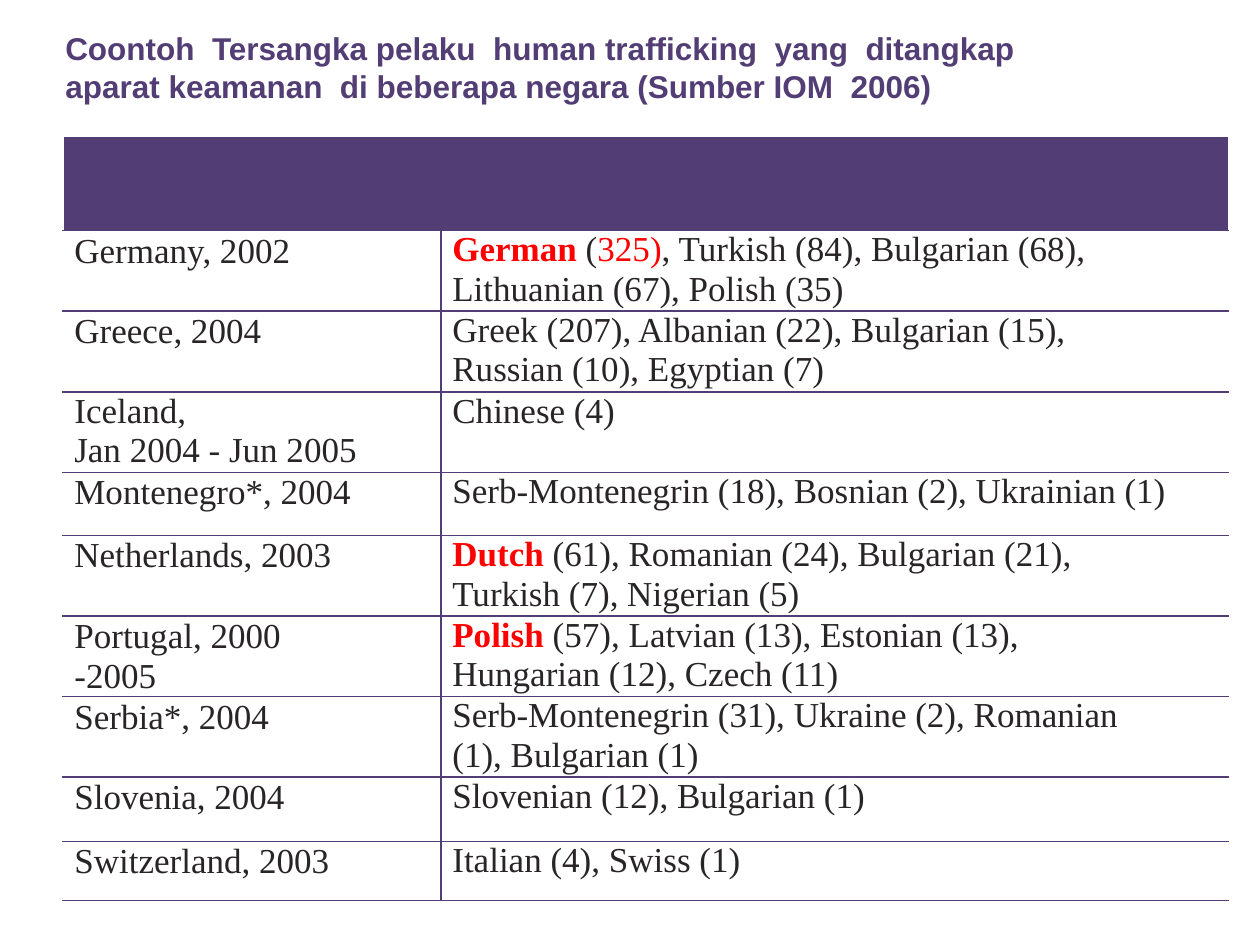
from dataclasses import dataclass

from lxml.etree import SubElement
from pptx import Presentation
from pptx.dml.color import RGBColor as RGB
from pptx.enum.text import MSO_ANCHOR as ANCHOR
from pptx.oxml.ns import qn
from pptx.util import Inches, Pt


@dataclass(frozen=True)
class Theme:
    purple: RGB = RGB(0x52, 0x3D, 0x75)
    ink: RGB = RGB(0x29, 0x24, 0x25)
    red: RGB = RGB(0xFF, 0, 0)
    white: RGB = RGB(0xFF, 0xFF, 0xFF)
    title_font: str = "Arial"
    body_font: str = "Times New Roman"
    title_size: int = 18
    body_size: int = 20
    border: int = 1


@dataclass(frozen=True)
class Part:
    text: str
    red: bool = False
    bold: bool = False


@dataclass(frozen=True)
class Arrests:
    place: list[str]
    suspects: list[list[Part]]
    height: float = 0.64
    place_right: float = 0


T = Theme()


def lead(name: str, rest: str) -> list[Part]:
    """A line that opens with a highlighted nationality."""
    return [Part(name, red=True, bold=True), Part(rest)]


def plain(*lines: str) -> list[list[Part]]:
    return [[Part(line)] for line in lines]


ROWS = [
    Arrests(["Germany, 2002"], [
        lead("German", " (") + [Part("325)", red=True), Part(", Turkish (84), Bulgarian (68),")],
        *plain("Lithuanian (67), Polish (35)")]),
    Arrests(["Greece, 2004"], plain("Greek (207), Albanian (22), Bulgarian (15),",
                                    "Russian (10), Egyptian (7)")),
    Arrests(["Iceland,", "Jan 2004 - Jun 2005"], plain("Chinese (4)")),
    Arrests(["Montenegro*, 2004"],
            plain("Serb-Montenegrin (18), Bosnian (2), Ukrainian (1)"), 0.5),
    Arrests(["Netherlands, 2003"], [lead("Dutch ", "(61), Romanian (24), Bulgarian (21),"),
                                    *plain("Turkish (7), Nigerian (5)")]),
    Arrests(["Portugal, 2000 -2005"], [lead("Polish ", "(57), Latvian (13), Estonian (13),"),
                                       *plain("Hungarian (12), Czech (11)")],
            place_right=0.75),
    Arrests(["Serbia*, 2004"], plain("Serb-Montenegrin (31), Ukraine (2), Romanian",
                                     "(1), Bulgarian (1)")),
    Arrests(["Slovenia, 2004"], plain("Slovenian (12), Bulgarian (1)"), 0.51),
    Arrests(["Switzerland, 2003"], plain("Italian (4), Swiss (1)"), 0.47),
]
COLS = [3, 6.25]
HEADER_HEIGHT = 0.75


def add_run(p, text: str, *, font: str = T.body_font, size: float = T.body_size,
            color: RGB = T.ink, bold: bool = False) -> None:
    r = p.add_run()
    r.text = text
    r.font.name, r.font.size, r.font.bold = font, Pt(size), bold
    r.font.color.rgb = color


def set_borders(cell, sides: str) -> None:
    """Rule the given sides; sides follow the schema order L, R, T, B."""
    tc_pr = cell._tc.get_or_add_tcPr()
    for i, side in enumerate(sides):
        ln = SubElement(tc_pr, qn(f"a:ln{side}"), w=str(Pt(T.border)))
        fill = SubElement(ln, qn("a:solidFill"))
        SubElement(fill, qn("a:srgbClr"), val=str(T.purple))
        tc_pr.remove(ln)
        tc_pr.insert(i, ln)


def fill_cell(cell, color: RGB) -> None:
    cell.fill.solid()
    cell.fill.fore_color.rgb = color


def write_cell(cell, lines: list[list[Part]], *, sides: str, spacing: float = 1,
               right: float = 0) -> None:
    cell.margin_left = cell.margin_top = cell.margin_bottom = 0
    cell.margin_right = Inches(right)
    tf = cell.text_frame
    for i, parts in enumerate(lines):
        p = tf.add_paragraph() if i else tf.paragraphs[0]
        p._p.get_or_add_pPr().set("marL", str(Inches(0.09)))
        p.space_before = Pt(0.3 if i else 4)
        p.line_spacing = spacing
        for part in parts:
            add_run(p, part.text, color=T.red if part.red else T.ink, bold=part.bold)
    fill_cell(cell, T.white)
    set_borders(cell, sides)


def add_title(s, text: str) -> None:
    sp = s.shapes.add_textbox(Inches(0.42), 0, Inches(8.46), Inches(0.89))
    tf = sp.text_frame
    tf.word_wrap = True
    tf.vertical_anchor = ANCHOR.MIDDLE
    tf.margin_top = Inches(0.22)
    add_run(tf.paragraphs[0], text, font=T.title_font, size=T.title_size,
            color=T.purple, bold=True)


def add_arrests_table(s, rows: list[Arrests]) -> None:
    heights = [HEADER_HEIGHT, *(row.height for row in rows)]
    table = s.shapes.add_table(len(heights), len(COLS), Inches(0.5), Inches(1.08),
                               Inches(sum(COLS)), Inches(sum(heights))).table
    table.first_row = table.horz_banding = False
    for col, width in zip(table.columns, COLS):
        col.width = Inches(width)
    for line, height in zip(table.rows, heights):
        line.height = Inches(height)

    # Empty header band
    for cell in table.rows[0].cells:
        fill_cell(cell, T.purple)
    table.cell(0, 0).merge(table.cell(0, 1))

    # One row per country
    for i, row in enumerate(rows, start=1):
        write_cell(table.cell(i, 0), plain(*row.place), sides="RTB",
                   spacing=1.03 if len(row.place) == 1 else 1, right=row.place_right)
        write_cell(table.cell(i, 1), row.suspects, sides="LTB")


def main() -> None:
    prs = Presentation()
    prs.slide_width, prs.slide_height = Inches(10), Inches(7.5)
    s = prs.slides.add_slide(prs.slide_layouts[6])
    add_arrests_table(s, ROWS)
    add_title(s, "Coontoh  Tersangka pelaku  human trafficking  yang  ditangkap "
                 "aparat keamanan  di beberapa negara (Sumber IOM  2006)")
    prs.save("out.pptx")


if __name__ == "__main__":
    main()
